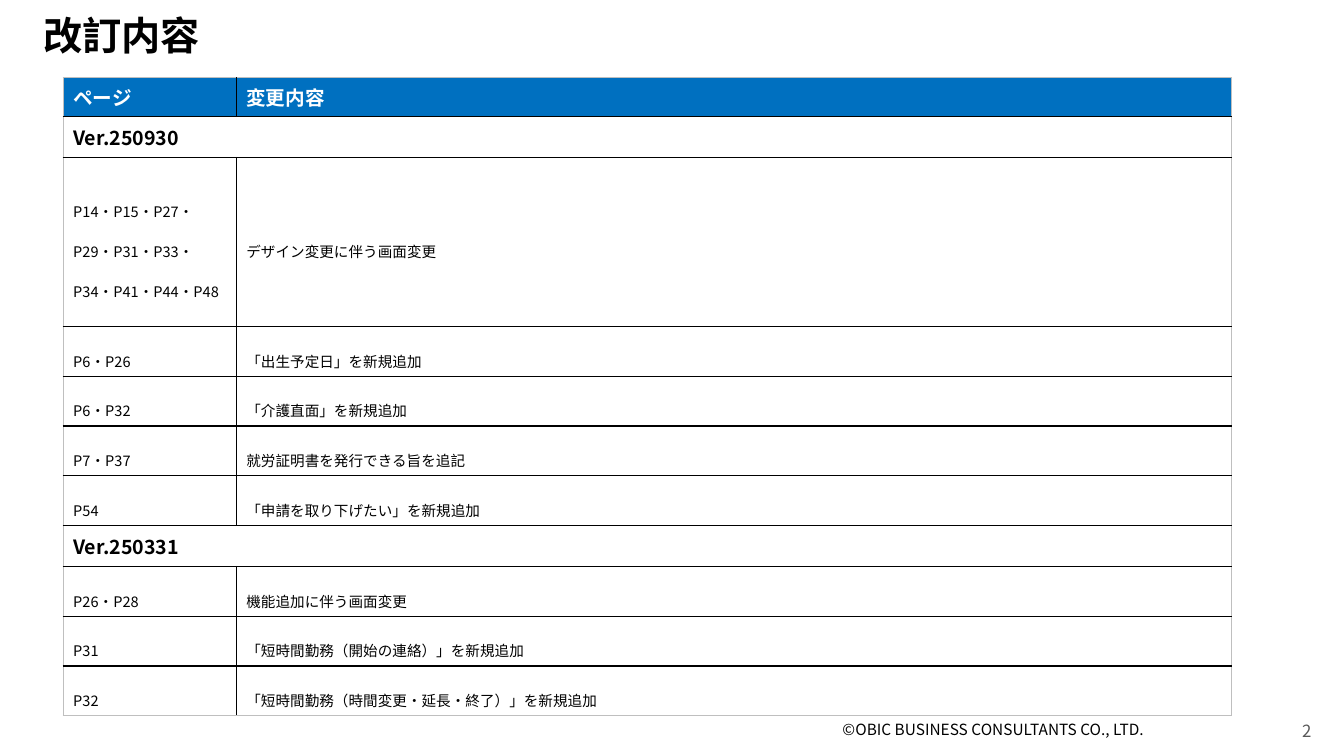
from dataclasses import dataclass

from lxml import etree
from pptx import Presentation
from pptx import util as u
from pptx.dml.color import RGBColor
from pptx.enum import text
from pptx.oxml.ns import qn

FONT = "Noto Sans CJK JP"
COLOURS = {
    "ink": "000000",
    "header": "0070C0",
    "header_text": "FFFFFF",
    "number": "595959",
    "outer_edge": "BFBFBF",
}


@dataclass(frozen=True)
class Style:
    size: float
    colour: str = "ink"
    bold: bool = False
    baseline: int = 0


@dataclass(frozen=True)
class Label:
    wording: str
    left: float
    top: float
    width: float
    height: float
    style: Style
    line_spacing: float = 1.0
    align: text.PP_ALIGN = text.PP_ALIGN.LEFT


@dataclass(frozen=True)
class Entry:
    pages: str
    change: str = ""
    style: Style = Style(18, baseline=-25000)
    height: float = 35.55


HEADER = Style(14, "header_text", bold=True)
VERSION = Style(14, bold=True)
VERSION_HEIGHT = 29.3

LABELS = [
    Label("©OBIC BUSINESS CONSULTANTS CO., LTD.", 594.7, 511.2, 324, 28.8,
          Style(11)),
    Label("2", 727.9, 511.2, 216, 28.8, Style(12, "number"),
          align=text.PP_ALIGN.RIGHT),
    Label("改訂内容", 23.8, 8.1, 903.6, 46.8, Style(28, bold=True),
          line_spacing=0.9),
]

ENTRIES = [
    Entry("ページ", "変更内容", HEADER, 27.6),
    Entry("Ver.250930", style=VERSION, height=VERSION_HEIGHT),
    Entry("P14・P15・P27・P29・P31・P33・P34・P41・P44・P48",
          "デザイン変更に伴う画面変更", height=120.7),
    Entry("P6・P26", "「出生予定日」を新規追加"),
    Entry("P6・P32", "「介護直面」を新規追加"),
    Entry("P7・P37", "就労証明書を発行できる旨を追記"),
    Entry("P54", "「申請を取り下げたい」を新規追加"),
    Entry("Ver.250331", style=VERSION, height=VERSION_HEIGHT),
    Entry("P26・P28", "機能追加に伴う画面変更"),
    Entry("P31", "「短時間勤務（開始の連絡）」を新規追加"),
    Entry("P32", "「短時間勤務（時間変更・延長・終了）」を新規追加"),
]
COLUMN_WIDTHS = [123.7, 710.8]


def colour(name: str) -> RGBColor:
    return RGBColor.from_string(COLOURS[name])


def add_span(para, wording: str, style: Style) -> None:
    span = para.add_run()
    span.text = wording
    span.font.name = FONT
    span.font.size = u.Pt(style.size)
    span.font.bold = style.bold
    span.font.color.rgb = colour(style.colour)
    properties = span._r.get_or_add_rPr()
    etree.SubElement(properties, qn("a:ea"), typeface=FONT)
    if style.baseline:
        properties.set("baseline", str(style.baseline))


def add_label(page, label: Label) -> None:
    box = page.shapes.add_textbox(u.Pt(label.left), u.Pt(label.top),
                                  u.Pt(label.width), u.Pt(label.height))
    frame = box.text_frame
    frame.word_wrap = True
    para = frame.paragraphs[0]
    para.alignment = label.align
    para.line_spacing = label.line_spacing
    add_span(para, label.wording, label.style)


def set_borders(cell, edges: dict[str, str]) -> None:
    properties = cell._tc.get_or_add_tcPr()
    for position, (side, name) in enumerate(edges.items()):
        line = etree.Element(qn(f"a:ln{side}"), w=str(u.Pt(1)))
        fill = etree.SubElement(line, qn("a:solidFill"))
        etree.SubElement(fill, qn("a:srgbClr"), val=COLOURS[name])
        properties.insert(position, line)


def add_revisions(page, entries: list[Entry]) -> None:
    holder = page.shapes.add_table(
        len(entries), len(COLUMN_WIDTHS), u.Pt(45.1), u.Pt(55.6),
        u.Pt(sum(COLUMN_WIDTHS)), u.Pt(sum(entry.height for entry in entries)))
    table = holder.table
    table.first_row = False
    table.horz_banding = False
    for column, width in zip(table.columns, COLUMN_WIDTHS):
        column.width = u.Pt(width)

    last = len(entries) - 1
    for index, entry in enumerate(entries):
        table.rows[index].height = u.Pt(entry.height)
        pages, change = table.cell(index, 0), table.cell(index, 1)
        if not entry.change:
            pages.merge(change)
        for cell, wording in ((pages, entry.pages), (change, entry.change)):
            cell.vertical_anchor = text.MSO_ANCHOR.MIDDLE
            if entry.style is HEADER:
                cell.fill.solid()
                cell.fill.fore_color.rgb = colour("header")
            else:
                cell.fill.background()
            if wording:
                add_span(cell.text_frame.paragraphs[0], wording, entry.style)
            set_borders(cell, {
                "L": "outer_edge" if cell is pages else "ink",
                "R": "ink" if cell is pages and entry.change else "outer_edge",
                "T": "ink" if index else "outer_edge",
                "B": "ink" if index < last else "outer_edge",
            })


def main() -> None:
    deck = Presentation()
    deck.slide_width, deck.slide_height = u.Pt(960), u.Pt(540)
    page = deck.slides.add_slide(deck.slide_layouts[6])
    for label in LABELS:
        add_label(page, label)
    add_revisions(page, ENTRIES)
    deck.save("out.pptx")


if __name__ == "__main__":
    main()
